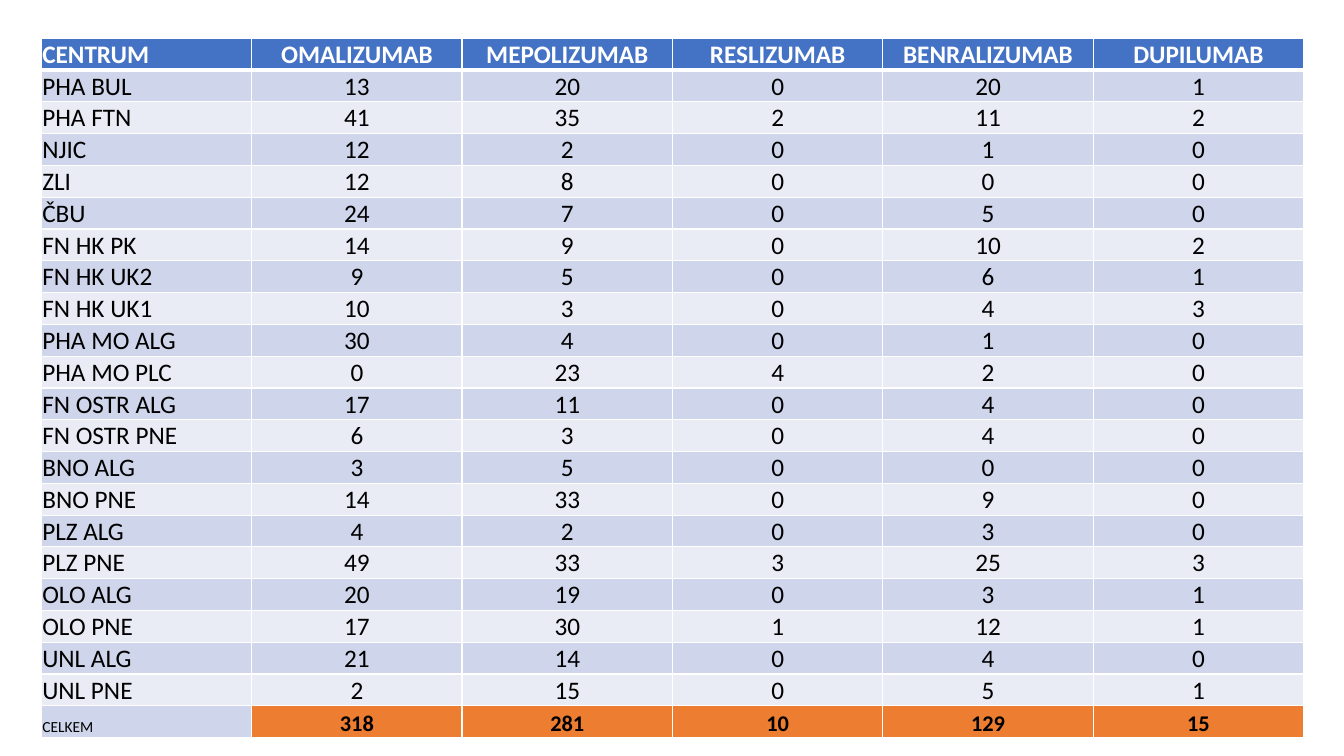
import pptx
import pptx.dml.color
import pptx.enum.text
import pptx.oxml
import pptx.oxml.ns
import pptx.util
from pptx.util import Inches


def color(value):
    return pptx.dml.color.RGBColor.from_string(value)


def write_cell(cell, text, fill, font_color="000000", size=18, bold=False, centered=True, bottom_line=1):
    cell.margin_left = cell.margin_top = cell.margin_right = Inches(0.01)
    cell.margin_bottom = 0
    cell.vertical_anchor = pptx.enum.text.MSO_ANCHOR.BOTTOM
    properties = cell._tc.get_or_add_tcPr()
    for side, width in (("L", 1), ("R", 1), ("T", 1), ("B", bottom_line)):
        properties.append(pptx.oxml.parse_xml(
            f'<a:ln{side} {pptx.oxml.ns.nsdecls("a")} w="{pptx.util.Pt(width)}">'
            f'<a:solidFill><a:srgbClr val="FFFFFF"/></a:solidFill></a:ln{side}>'))
    cell.fill.solid()
    cell.fill.fore_color.rgb = color(fill)
    paragraph = cell.text_frame.paragraphs[0]
    alignment = pptx.enum.text.PP_ALIGN
    paragraph.alignment = alignment.CENTER if centered else alignment.LEFT
    run = paragraph.add_run()
    run.text = str(text)
    run.font.name = "Calibri"
    run.font.size = pptx.util.Pt(size)
    run.font.bold = bold
    run.font.color.rgb = color(font_color)


header = ["CENTRUM", "OMALIZUMAB", "MEPOLIZUMAB", "RESLIZUMAB", "BENRALIZUMAB", "DUPILUMAB"]
centers = [
    ("PHA BUL", 13, 20, 0, 20, 1),
    ("PHA FTN", 41, 35, 2, 11, 2),
    ("NJIC", 12, 2, 0, 1, 0),
    ("ZLI", 12, 8, 0, 0, 0),
    ("ČBU", 24, 7, 0, 5, 0),
    ("FN HK PK", 14, 9, 0, 10, 2),
    ("FN HK UK2", 9, 5, 0, 6, 1),
    ("FN HK UK1", 10, 3, 0, 4, 3),
    ("PHA MO ALG", 30, 4, 0, 1, 0),
    ("PHA MO PLC", 0, 23, 4, 2, 0),
    ("FN OSTR ALG", 17, 11, 0, 4, 0),
    ("FN OSTR PNE", 6, 3, 0, 4, 0),
    ("BNO ALG", 3, 5, 0, 0, 0),
    ("BNO PNE", 14, 33, 0, 9, 0),
    ("PLZ ALG", 4, 2, 0, 3, 0),
    ("PLZ PNE", 49, 33, 3, 25, 3),
    ("OLO ALG", 20, 19, 0, 3, 1),
    ("OLO PNE", 17, 30, 1, 12, 1),
    ("UNL ALG", 21, 14, 0, 4, 0),
    ("UNL PNE", 2, 15, 0, 5, 1),
]
totals = ["CELKEM", 318, 281, 10, 129, 15]
rows = [header, *centers, totals]

presentation = pptx.Presentation()
presentation.slide_width = Inches(13.33)
presentation.slide_height = Inches(7.5)
slide = presentation.slides.add_slide(presentation.slide_layouts[6])

table = slide.shapes.add_table(
    len(rows), len(header), Inches(0.41), Inches(0.38), Inches(12.52), Inches(6.83)).table

for row_index, row in enumerate(rows):
    band = "CFD5EA" if row_index % 2 else "E9EBF5"
    for column_index, text in enumerate(row):
        cell = table.cell(row_index, column_index)
        is_label = column_index == 0
        if row is header:
            write_cell(cell, text, "4472C4", font_color="FFFFFF", bold=True,
                       centered=not is_label, bottom_line=3)
        elif row is totals and is_label:
            write_cell(cell, text, band, size=11, centered=False)
        elif row is totals:
            write_cell(cell, text, "ED7D31", size=16, bold=True)
        else:
            write_cell(cell, text, band, centered=not is_label)

presentation.save("out.pptx")
